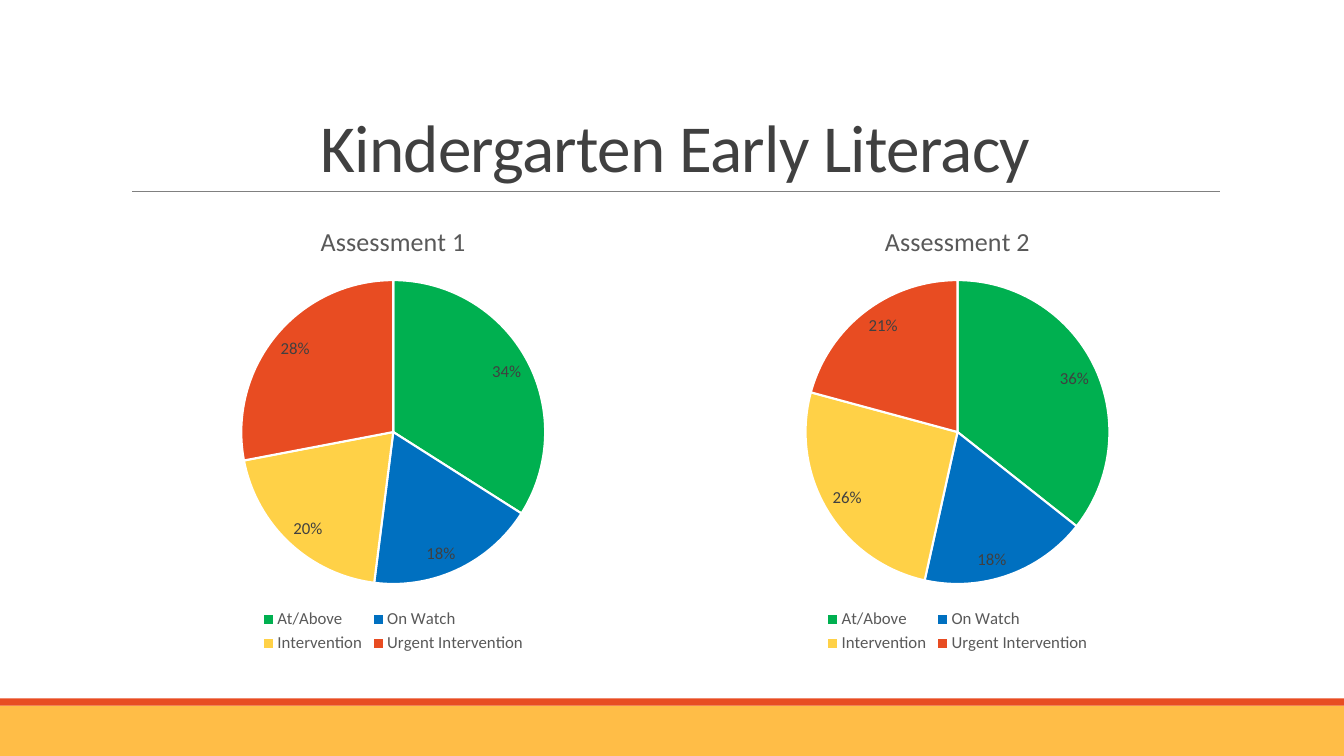
import pptx
import pptx.chart.data
import pptx.dml.color
import pptx.enum.chart
import pptx.enum.shapes
import pptx.enum.text
import pptx.oxml
import pptx.oxml.ns
import pptx.util
from pptx.util import Cm

FONT = "Calibri"
COLORS = {
    "band": "FFBD47",
    "stripe": "E84C22",
    "rule": "808080",
    "title": "404040",
    "chart_text": "595959",
    "label": "404040",
    "border": "FFFFFF",
}
LEVELS = {
    "At/Above": "00B050",
    "On Watch": "0070C0",
    "Intervention": "FFD147",
    "Urgent Intervention": "E84C22",
}
ASSESSMENTS = {
    "Assessment 1": (34, 18, 20, 28),
    "Assessment 2": (36, 18, 26, 21),
}
SLIDE_W, SLIDE_H = 33.87, 19.05


def rgb(value):
    return pptx.dml.color.RGBColor.from_string(value)


def set_font(font, size, color):
    font.name = FONT
    font.size = pptx.util.Pt(size)
    font.bold = False
    font.color.rgb = rgb(color)


def add_bar(s, x, y, w, h, color):
    sp = s.shapes.add_shape(
        pptx.enum.shapes.MSO_SHAPE.RECTANGLE, Cm(x), Cm(y), Cm(w), Cm(h))
    sp.shadow.inherit = False
    sp.fill.solid()
    sp.fill.fore_color.rgb = rgb(color)
    sp.line.fill.background()


def add_footer(s, x, y, w, h):
    stripe_h = 0.18
    add_bar(s, x, y + stripe_h, w, h - stripe_h, COLORS["band"])
    add_bar(s, x, y, w, stripe_h, COLORS["stripe"])


def add_title(s, x, y, w, h):
    sp = s.shapes.title
    sp.left, sp.top, sp.width, sp.height = Cm(x), Cm(y), Cm(w), Cm(h)
    tf = sp.text_frame
    tf.word_wrap = True
    tf.auto_size = pptx.enum.text.MSO_AUTO_SIZE.NONE
    tf.vertical_anchor = pptx.enum.text.MSO_ANCHOR.BOTTOM
    p = tf.paragraphs[0]
    p.alignment = pptx.enum.text.PP_ALIGN.CENTER
    p.line_spacing = 0.85
    r = p.add_run()
    r.text = "Kindergarten Early Literacy"
    set_font(r.font, 48, COLORS["title"])
    r._r.get_or_add_rPr().set("spc", "-50")

    rule = s.shapes.add_connector(
        pptx.enum.shapes.MSO_CONNECTOR.STRAIGHT,
        Cm(x + 0.28), Cm(y + h), Cm(x + w - 0.25), Cm(y + h))
    rule.line.color.rgb = rgb(COLORS["rule"])
    rule.line.width = pptx.util.Pt(0.5)
    sp_pr = rule._element.spPr
    sp_pr.append(pptx.oxml.parse_xml(
        "<a:effectLst %s/>" % pptx.oxml.ns.nsdecls("a")))


def add_pie(s, name, values, x, y, w, h):
    data = pptx.chart.data.CategoryChartData()
    data.categories = list(LEVELS)
    data.add_series(name, values)
    chart = s.shapes.add_chart(
        pptx.enum.chart.XL_CHART_TYPE.PIE,
        Cm(x), Cm(y), Cm(w), Cm(h), data).chart
    set_font(chart.font, 10, COLORS["chart_text"])

    chart.has_title = True
    r = chart.chart_title.text_frame.paragraphs[0].add_run()
    r.text = name
    set_font(r.font, 18.6, COLORS["chart_text"])

    chart.has_legend = True
    chart.legend.position = pptx.enum.chart.XL_LEGEND_POSITION.BOTTOM
    chart.legend.include_in_layout = False
    set_font(chart.legend.font, 12, COLORS["chart_text"])

    plot = chart.plots[0]
    plot.vary_by_categories = True
    series = plot.series[0]
    for i, color in enumerate(LEVELS.values()):
        slice_format = series.points[i].format
        slice_format.fill.solid()
        slice_format.fill.fore_color.rgb = rgb(color)
        slice_format.line.color.rgb = rgb(COLORS["border"])
        slice_format.line.width = pptx.util.Pt(1.5)

    labels = series.data_labels
    labels.show_value = False
    labels.show_percentage = True
    labels.number_format = "0%"
    labels.number_format_is_linked = False
    labels.position = pptx.enum.chart.XL_LABEL_POSITION.INSIDE_END
    set_font(labels.font, 12, COLORS["label"])


def add_pies(s, x, y, w, h):
    gap = 0.5
    pie_w = (w - gap) / len(ASSESSMENTS)
    for i, (name, values) in enumerate(ASSESSMENTS.items()):
        add_pie(s, name, values, x + i * (pie_w + gap), y, pie_w, h)


def main():
    prs = pptx.Presentation()
    prs.slide_width, prs.slide_height = Cm(SLIDE_W), Cm(SLIDE_H)
    s = prs.slides.add_slide(prs.slide_layouts.get_by_name("Title Only"))
    add_footer(s, 0, 17.6, SLIDE_W, SLIDE_H - 17.6)
    add_title(s, 3.05, 0.79, 27.94, 4.04)
    add_pies(s, 3.05, 5.13, 27.94, 11.43)
    prs.save("out.pptx")


if __name__ == "__main__":
    main()
